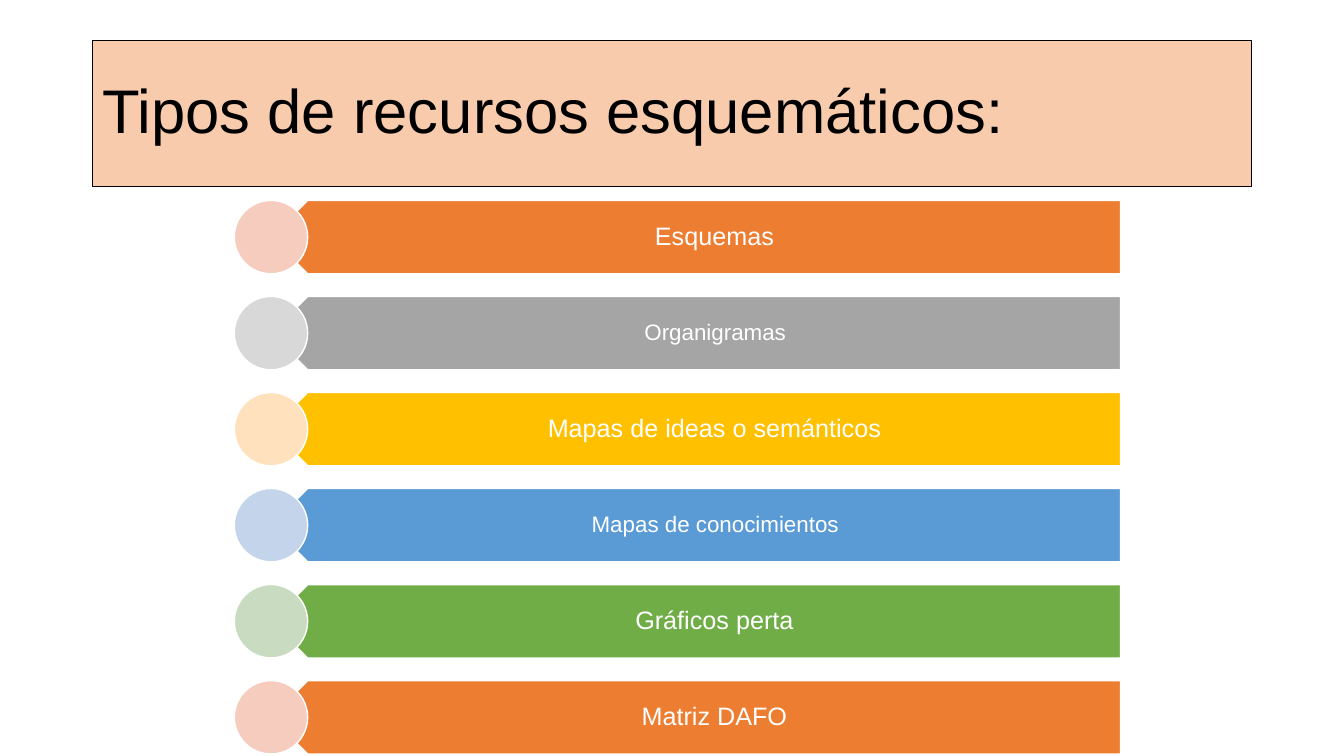
from pptx import Presentation
from pptx.dml.color import RGBColor
from pptx.enum.shapes import MSO_SHAPE as Shape
from pptx.enum.text import MSO_ANCHOR as Anchor, PP_ALIGN as Align
from pptx.util import Cm, Pt

FONT = "Arial"
# Label, text size, bar colour, circle colour
RESOURCES = [
    ("Esquemas", 18, "ED7D31", "F6CCBE"),
    ("Organigramas", 16, "A5A5A5", "D8D8D8"),
    ("Mapas de ideas o semánticos", 18, "FFC000", "FFE2BD"),
    ("Mapas de conocimientos", 16, "5B9BD5", "C4D5EB"),
    ("Gráficos perta", 18, "70AD47", "C9DBC1"),
    ("Matriz DAFO", 18, "ED7D31", "F6CCBE"),
]
FIRST_TOP, ROW_STEP, ROW_HEIGHT = 5.05, 2.42, 1.85
BAR_LEFT, BAR_WIDTH = 6.83, 21.41
CIRCLE_LEFT = BAR_LEFT - ROW_HEIGHT / 2
LABEL_LEFT = 7.32
LABEL_WIDTH = BAR_LEFT + BAR_WIDTH - LABEL_LEFT


def color(hex_value):
    return RGBColor.from_string(hex_value)


def set_all(target, values):
    for name, value in values.items():
        setattr(target, name, value)


def add_figure(shapes, kind, place, fill, line="FFFFFF", line_width=1):
    figure = shapes.add_shape(kind, *map(Cm, place))
    figure.shadow.inherit = False
    figure.fill.solid()
    figure.fill.fore_color.rgb = color(fill)
    figure.line.color.rgb = color(line)
    figure.line.width = Pt(line_width)
    return figure


def write_text(box, text, size, text_color, frame_format, para_format):
    frame = box.text_frame
    set_all(frame, {"word_wrap": True, "vertical_anchor": Anchor.MIDDLE, **frame_format})
    para = frame.paragraphs[0]
    set_all(para, {"line_spacing": 0.9, **para_format})
    span = para.add_run()
    span.text = text
    set_all(span.font, {"name": FONT, "size": Pt(size)})
    span.font.color.rgb = color(text_color)


def add_title(page, text):
    box = add_figure(page.shapes, Shape.RECTANGLE, (2.33, 1.02, 29.21, 3.68),
                     "F8CBAD", "000000", 0.75)
    write_text(box, text, 44, "000000", {}, {"alignment": Align.LEFT})


def add_resource(shapes, top, label, size, bar_fill, circle_fill):
    # Bar pointing left
    bar = add_figure(shapes, Shape.PENTAGON,
                     (BAR_LEFT, top, BAR_WIDTH, ROW_HEIGHT), bar_fill)
    bar.rotation = 180

    # Upright label over the bar
    box = shapes.add_textbox(*map(Cm, (LABEL_LEFT, top, LABEL_WIDTH, ROW_HEIGHT)))
    margins = {
        "margin_left": Cm(0.81),
        "margin_right": Cm(0.02 * size),
        "margin_top": Cm(0.18),
        "margin_bottom": Cm(0.18),
    }
    write_text(box, label, size, "FFFFFF", margins, {"alignment": Align.CENTER})

    # Circle over the tip
    add_figure(shapes, Shape.OVAL,
               (CIRCLE_LEFT, top, ROW_HEIGHT, ROW_HEIGHT), circle_fill)


def main():
    deck = Presentation()
    set_all(deck, {"slide_width": Cm(33.87), "slide_height": Cm(19.05)})
    page = deck.slides.add_slide(deck.slide_layouts[6])

    add_title(page, "Tipos de recursos esquemáticos:")

    # List of resources, one row each
    rows = page.shapes.add_group_shape()
    for index, resource in enumerate(RESOURCES):
        add_resource(rows.shapes, FIRST_TOP + index * ROW_STEP, *resource)

    deck.save("out.pptx")


if __name__ == "__main__":
    main()
